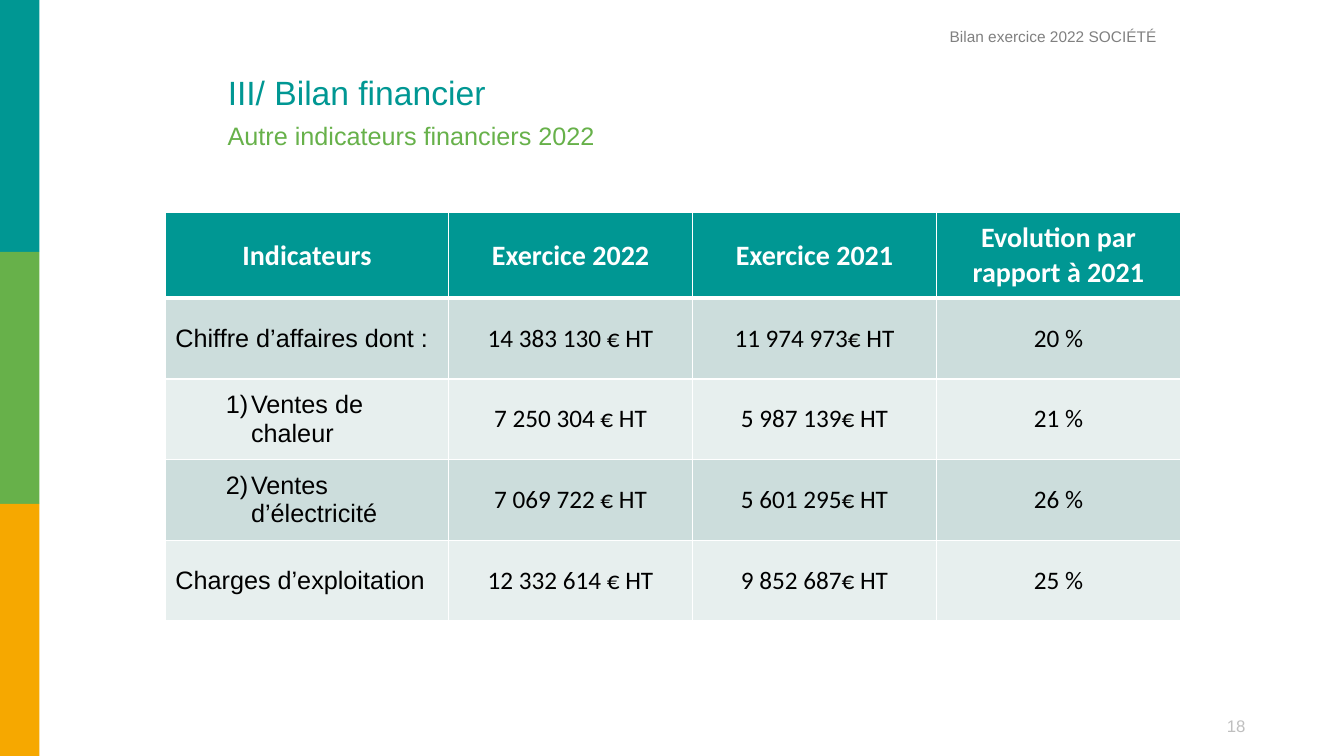
from dataclasses import dataclass

from lxml import etree
from pptx import Presentation
from pptx.dml.color import RGBColor
from pptx.enum.shapes import MSO_SHAPE
from pptx.enum.text import MSO_ANCHOR, PP_ALIGN
from pptx.oxml.ns import qn
from pptx.util import Emu, Inches, Pt

RECTANGLE = MSO_SHAPE.RECTANGLE
MIDDLE = MSO_ANCHOR.MIDDLE
LEFT, CENTER = PP_ALIGN.LEFT, PP_ALIGN.CENTER

PAGE_WIDTH, PAGE_HEIGHT = Inches(13.33), Inches(7.5)
TITLE_ONLY = 5

TEAL, GREEN, ORANGE = "009793", "67B14A", "F6A800"
WHITE, BLACK, GREY, PALE_GREY = "FFFFFF", "000000", "808080", "BFBFBF"
BANDS = ("CCDDDC", "E7EFEE")

STRIPE_WIDTH = 2.93
COLUMN_SHARES = (21.08, 18.15, 18.15, 18.15)
ROW_SHARES = (11.33, 10.67, 10.67, 10.67, 10.67)


@dataclass(frozen=True)
class Area:
    """Place and size in percent of the slide's width and height."""
    left: float
    top: float
    width: float
    height: float

    def lengths(self) -> tuple[Emu, Emu, Emu, Emu]:
        return across(self.left), down(self.top), across(self.width), down(self.height)


@dataclass(frozen=True)
class Label:
    text: str
    area: Area
    size: float
    color: str
    align: PP_ALIGN = LEFT
    line_spacing: float = 0.9


@dataclass(frozen=True)
class Indicator:
    name: str
    current: str
    previous: str
    change: str
    number: int = 0


TITLE = Label("III/ Bilan financier", Area(16.2, 9.87, 56.04, 5.33), 24, TEAL)
LABELS = (
    Label("Autre indicateurs financiers 2022", Area(16.2, 16, 52.66, 4.4), 18, GREEN),
    Label("Bilan exercice 2022 SOCIÉTÉ", Area(69.92, 3.47, 26.33, 2.93), 11, GREY),
    Label("18", Area(89.95, 94, 4.05, 4), 12, PALE_GREY, CENTER, 1),
)
TABLE_AREA = Area(12.3, 28.13, sum(COLUMN_SHARES), sum(ROW_SHARES))
HEADINGS = ("Indicateurs", "Exercice 2022", "Exercice 2021", "Evolution par rapport à 2021")
INDICATORS = (
    Indicator("Chiffre d’affaires dont :", "14 383 130 € HT", "11 974 973€ HT", "20 %"),
    Indicator("Ventes de chaleur", "7 250 304 € HT", "5 987 139€ HT", "21 %", number=1),
    Indicator("Ventes d’électricité", "7 069 722 € HT", "5 601 295€ HT", "26 %", number=2),
    Indicator("Charges d’exploitation", "12 332 614 € HT", "9 852 687€ HT", "25 %"),
)


def across(percent: float) -> Emu:
    return Emu(round(PAGE_WIDTH * percent / 100))


def down(percent: float) -> Emu:
    return Emu(round(PAGE_HEIGHT * percent / 100))


def paint(color_format, color: str) -> None:
    color_format.rgb = RGBColor.from_string(color)


def fill_solid(fill, color: str) -> None:
    fill.solid()
    paint(fill.fore_color, color)


def write(frame, text: str, *, size: float, color: str, font: str = "Arial",
          bold: bool = False, align: PP_ALIGN = LEFT, line_spacing: float = 1,
          number: int = 0) -> None:
    """Write one paragraph; a number above zero makes it an indented list item."""
    para = frame.paragraphs[0]
    para.alignment = align
    para.line_spacing = line_spacing
    para.space_before = Pt(0)
    if number:
        para.level = 1
        properties = para._p.get_or_add_pPr()
        properties.set("marL", str(Inches(0.75)))
        properties.set("indent", str(Inches(-0.25)))
        etree.SubElement(properties, qn("a:buAutoNum"),
                         type="arabicParenR", startAt=str(number))
    span = para.add_run()
    span.text = text
    span.font.name = font
    span.font.size = Pt(size)
    span.font.bold = bold
    paint(span.font.color, color)


def draw_label(box, label: Label) -> None:
    box.left, box.top, box.width, box.height = label.area.lengths()
    frame = box.text_frame
    frame.word_wrap = True
    frame.vertical_anchor = MIDDLE
    write(frame, label.text, size=label.size, color=label.color,
          align=label.align, line_spacing=label.line_spacing)


def draw_stripes(page) -> None:
    colors = (TEAL, GREEN, ORANGE)
    height = 100 / len(colors)
    for index, color in enumerate(colors):
        area = Area(0, index * height, STRIPE_WIDTH, height)
        stripe = page.shapes.add_shape(RECTANGLE, *area.lengths())
        stripe.shadow.inherit = False
        stripe.line.fill.background()
        fill_solid(stripe.fill, color)


def set_borders(cell, top: float, bottom: float) -> None:
    properties = cell._tc.get_or_add_tcPr()
    for side, width in (("L", 1), ("R", 1), ("T", top), ("B", bottom)):
        line = etree.SubElement(properties, qn(f"a:ln{side}"), w=str(Pt(width)))
        solid = etree.SubElement(line, qn("a:solidFill"))
        etree.SubElement(solid, qn("a:srgbClr"), val=WHITE)


def draw_cell(cell, text: str, row: int, column: int, number: int) -> None:
    heading = row == 0
    set_borders(cell, top=3 if row == 1 else 1, bottom=3 if heading else 1)
    fill_solid(cell.fill, TEAL if heading else BANDS[(row - 1) % 2])
    cell.vertical_anchor = MIDDLE
    named = column == 0 and not heading
    write(cell.text_frame, text,
          size=20 if heading else 18,
          color=WHITE if heading else BLACK,
          font="Arial" if named else "Calibri",
          bold=heading,
          align=LEFT if named else CENTER,
          number=number if named else 0)


def draw_indicators(page) -> None:
    table = page.shapes.add_table(len(ROW_SHARES), len(COLUMN_SHARES),
                                  *TABLE_AREA.lengths()).table
    table.horz_banding = False
    for column, share in zip(table.columns, COLUMN_SHARES):
        column.width = across(share)
    for row, share in zip(table.rows, ROW_SHARES):
        row.height = down(share)
    for column, heading in enumerate(HEADINGS):
        draw_cell(table.cell(0, column), heading, 0, column, 0)
    for row, item in enumerate(INDICATORS, start=1):
        texts = (item.name, item.current, item.previous, item.change)
        for column, text in enumerate(texts):
            draw_cell(table.cell(row, column), text, row, column, item.number)


def main() -> None:
    deck = Presentation()
    deck.slide_width, deck.slide_height = PAGE_WIDTH, PAGE_HEIGHT
    page = deck.slides.add_slide(deck.slide_layouts[TITLE_ONLY])
    draw_stripes(page)
    draw_label(page.shapes.title, TITLE)
    for label in LABELS:
        draw_label(page.shapes.add_textbox(*label.area.lengths()), label)
    draw_indicators(page)
    deck.save("out.pptx")


if __name__ == "__main__":
    main()
